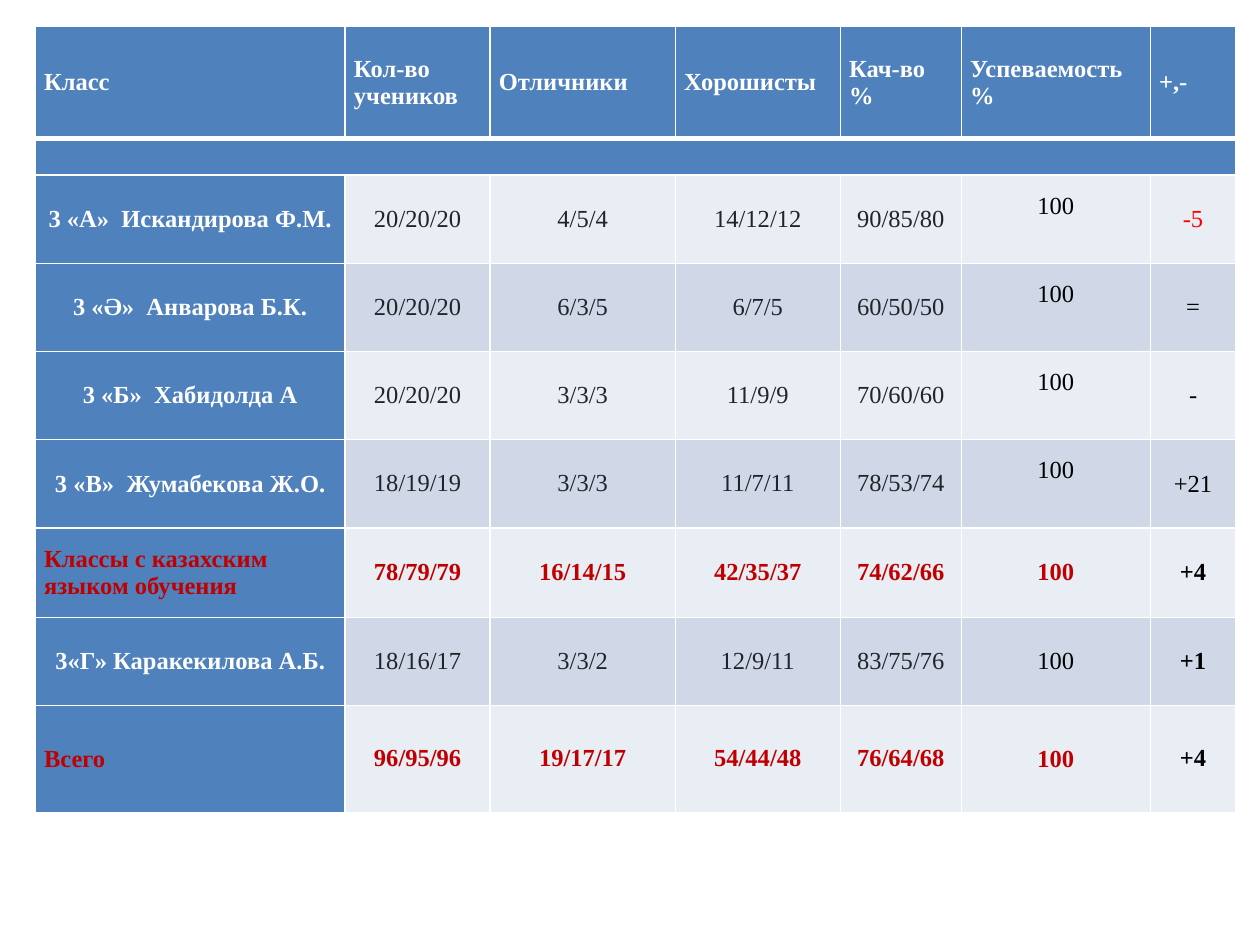
from lxml import etree
from pptx import Presentation, util as u
from pptx.dml.color import RGBColor
from pptx.enum import text
from pptx.oxml.ns import qn

COLORS = {"white": "FFFFFF", "blue": "4F81BD", "light": "E9EDF4", "dark": "D0D8E8",
          "ink": "212529", "black": "000000", "red": "FF0000", "crimson": "C00000"}
HEADERS = ["Класс", "Кол-во учеников", "Отличники", "Хорошисты",
           "Кач-во\n%", "Успеваемость\n%", "+,-"]
CLASSES = [
    ["3 «А»  Искандирова Ф.М.", "20/20/20", "4/5/4", "14/12/12", "90/85/80", "100", "-5"],
    ["3 «Ә»  Анварова Б.К.", "20/20/20", "6/3/5", "6/7/5", "60/50/50", "100", "="],
    ["3 «Б»  Хабидолда А", "20/20/20", "3/3/3", "11/9/9", "70/60/60", "100", "-"],
    ["3 «В»  Жумабекова Ж.О.", "18/19/19", "3/3/3", "11/7/11", "78/53/74", "100", "+21"],
    ["Классы с казахским языком обучения", "78/79/79", "16/14/15", "42/35/37",
     "74/62/66", "100", "+4"],
    ["3«Г» Каракекилова А.Б.", "18/16/17", "3/3/2", "12/9/11", "83/75/76", "100", "+1"],
    ["Всего", "96/95/96", "19/17/17", "54/44/48", "76/64/68", "100", "+4"],
]
COLUMNS = [24.6, 11.5, 14.7, 13.1, 9.6, 15, 6.8]
ROWS = [8.9, 2.9, 7, 7, 7, 7, 7.1, 7, 8.5]
TOTALS = (4, 6)


class Deck:
    font, size = "Times New Roman", 14
    unit = u.Inches(0.1)

    def __init__(self):
        self.prs = Presentation()
        self.prs.slide_width, self.prs.slide_height = self.grid(100), self.grid(75)
        self.s = self.prs.slides.add_slide(self.prs.slide_layouts[6])

    def grid(self, steps):
        return round(steps * self.unit)

    def table(self, left, top, columns, rows):
        frame = self.s.shapes.add_table(
            len(rows), len(columns), self.grid(left), self.grid(top),
            self.grid(sum(columns)), self.grid(sum(rows)))
        for col, width in zip(frame.table.columns, columns):
            col.width = self.grid(width)
        for row, height in zip(frame.table.rows, rows):
            row.height = self.grid(height)
        return frame.table

    def borders(self, cell, top=1, bottom=1):
        tcPr = cell._tc.get_or_add_tcPr()
        for side, width in zip("LRTB", (1, 1, top, bottom)):
            ln = etree.SubElement(tcPr, qn(f"a:ln{side}"), w=str(u.Pt(width)))
            fill = etree.SubElement(ln, qn("a:solidFill"))
            etree.SubElement(fill, qn("a:srgbClr"), val=COLORS["white"])

    def cell(self, cell, words, fill, color="white", bold=False, center=False,
             spaced=False, bottom=0, edges=(1, 1)):
        self.borders(cell, *edges)
        cell.fill.solid()
        cell.fill.fore_color.rgb = RGBColor.from_string(COLORS[fill])
        cell.vertical_anchor = text.MSO_ANCHOR.MIDDLE
        cell.margin_left = cell.margin_right = u.Inches(0.07)
        cell.margin_top = u.Inches(0.03 if spaced else 0)
        cell.margin_bottom = u.Inches(0.03 if spaced else bottom)
        cell.text_frame.text = words
        for p in cell.text_frame.paragraphs:
            p.alignment = text.PP_ALIGN.CENTER if center else text.PP_ALIGN.LEFT
            if spaced:
                p.line_spacing = u.Pt(15)
            if not p.runs:
                etree.SubElement(p._p, qn("a:endParaRPr"), sz=str(self.size * 100))
            for r in p.runs:
                r.font.name, r.font.size, r.font.bold = self.font, u.Pt(self.size), bold
                r.font.color.rgb = RGBColor.from_string(COLORS[color])


def class_row(deck, tbl, i, values):
    total = i in TOTALS
    fill = "dark" if i % 2 else "light"
    main = "crimson" if total else "ink"
    change = "red" if values[-1] == "-5" else "black"
    name, *counts, passed, diff = [tbl.cell(i + 2, c) for c in range(len(COLUMNS))]
    deck.cell(name, values[0], "blue", "crimson" if total else "white", True, not total)
    for cell, words in zip(counts, values[1:5]):
        deck.cell(cell, words, fill, main, total, True, True)
    deck.cell(passed, values[5], fill, "crimson" if total else "black", total, True,
              bottom=0.21 if i < 4 else 0)
    deck.cell(diff, values[6], fill, change, i >= 4, True, i >= 5)


def main():
    deck = Deck()
    tbl = deck.table(2.8, 2.1, COLUMNS, ROWS)
    for c, header in enumerate(HEADERS):
        deck.cell(tbl.cell(0, c), header, "blue", bold=True, edges=(1, 3))
        deck.cell(tbl.cell(1, c), "", "blue", edges=(3, 1))
    tbl.cell(1, 0).merge(tbl.cell(1, len(COLUMNS) - 1))
    for i, values in enumerate(CLASSES):
        class_row(deck, tbl, i, values)
    deck.prs.save("out.pptx")


if __name__ == "__main__":
    main()
